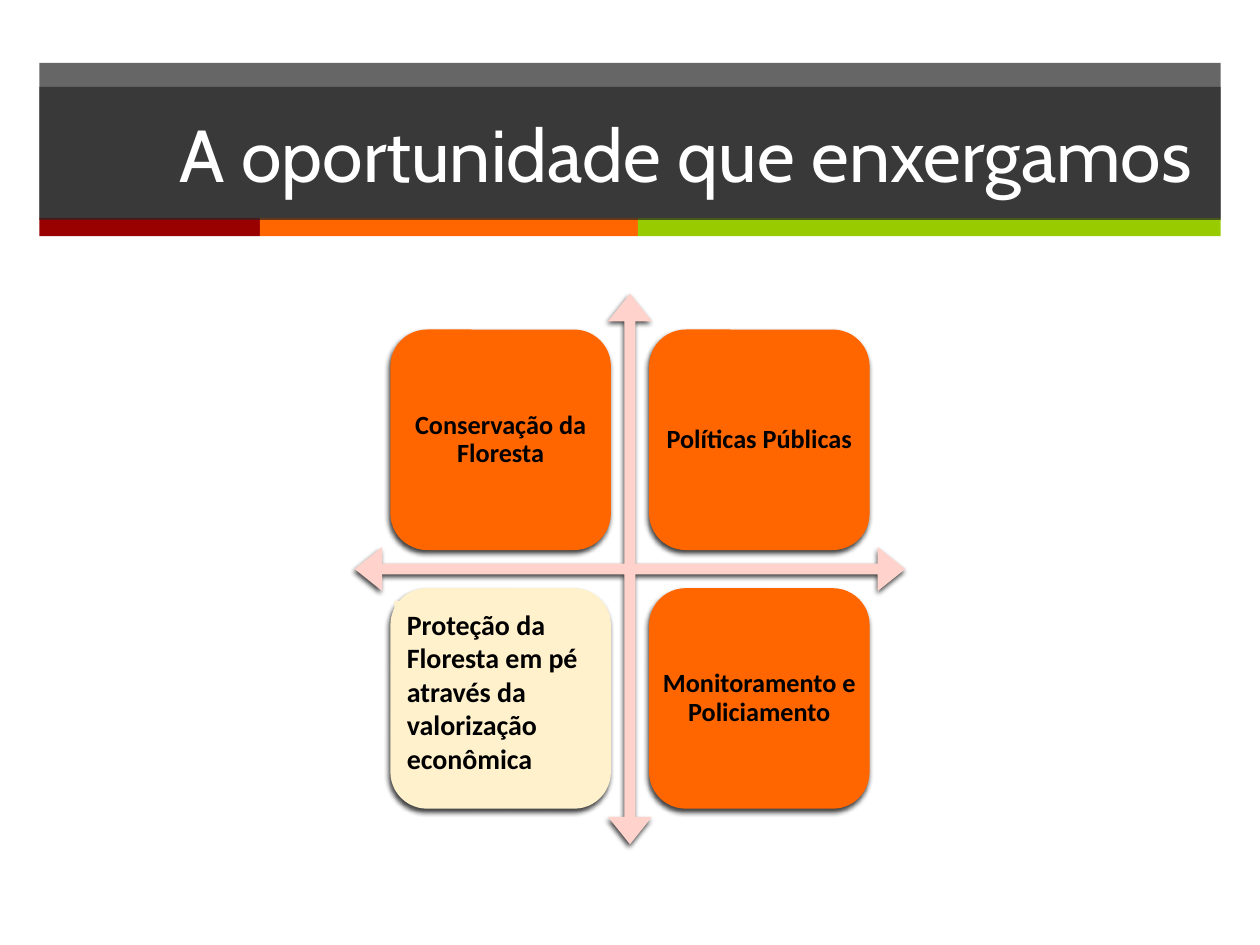
import pptx
import pptx.dml.color
import pptx.enum.shapes
import pptx.enum.text
import pptx.oxml
import pptx.oxml.ns
import pptx.util
from lxml import etree

Pt = pptx.util.Pt
RGBColor = pptx.dml.color.RGBColor
Shape = pptx.enum.shapes.MSO_SHAPE
Align = pptx.enum.text.PP_ALIGN
Anchor = pptx.enum.text.MSO_ANCHOR
AutoSize = pptx.enum.text.MSO_AUTO_SIZE
qn = pptx.oxml.ns.qn

CHARCOAL = RGBColor(0x26, 0x26, 0x26)
RED = RGBColor(0x99, 0x00, 0x00)
ORANGE = RGBColor(0xFF, 0x66, 0x00)
GREEN = RGBColor(0x99, 0xCC, 0x00)
PINK = RGBColor(0xFF, 0xD3, 0xCC)
CREAM = RGBColor(0xFF, 0xF1, 0xCC)
WHITE = RGBColor(0xFF, 0xFF, 0xFF)
BLACK = RGBColor(0x00, 0x00, 0x00)

BANNER_LEFT, BANNER_WIDTH = 22.5, 675
STRIPE_TOP, STRIPE_HEIGHT = 124.5, 10.5
STRIPES = [(126, RED), (216, ORANGE), (333, GREEN)]
CENTER_X, CENTER_Y = 360, 325.2
AXES_SIZE, QUADRANT_SIZE, QUADRANT_GAP = 314.6, 126, 21.8
QUADRANTS = [
    ("Conservação da Floresta", ORANGE),
    ("Políticas Públicas", ORANGE),
    ("", CREAM),
    ("Monitoramento e Policiamento", ORANGE),
]
PROTECTION = ["Proteção da Floresta em pé", "através da valorização econômica"]


def paint(shape, color, alpha=100):
    """Fill a shape with one colour, at the given opacity in percent."""
    shape.fill.solid()
    shape.fill.fore_color.rgb = color
    if alpha < 100:
        srgb = shape.element.spPr.find(f"{qn('a:solidFill')}/{qn('a:srgbClr')}")
        etree.SubElement(srgb, qn("a:alpha"), val=str(alpha * 1000))


def add_block(slide, kind, left, top, width, height, color, alpha=100):
    """Add a borderless preset shape without a shadow."""
    block = slide.shapes.add_shape(kind, Pt(left), Pt(top), Pt(width), Pt(height))
    block.shadow.inherit = False
    block.line.fill.background()
    paint(block, color, alpha)
    return block


def cast_shadow(shape):
    """Give a shape the soft shadow of the matrix."""
    effects = shape.element.spPr.find(qn("a:effectLst"))
    shadow = etree.SubElement(
        effects, qn("a:outerShdw"), blurRad=str(Pt(3)), dist=str(Pt(2)),
        dir=str(110 * 60000), algn="ctr", rotWithShape="0")
    black = etree.SubElement(shadow, qn("a:srgbClr"), val=str(BLACK))
    etree.SubElement(black, qn("a:alpha"), val="75000")


def write(paragraph, text, font, size, color, align, bold=False):
    """Write one formatted run into a paragraph."""
    paragraph.alignment = align
    run = paragraph.add_run()
    run.text = text
    run.font.name = font
    run.font.size = Pt(size)
    run.font.bold = bold
    run.font.color.rgb = color


def add_banner(slide):
    """Build the header band, the stripes and the title."""
    add_block(slide, Shape.RECTANGLE, BANNER_LEFT, 36, BANNER_WIDTH, 89, CHARCOAL, 70)
    left = BANNER_LEFT
    for width, color in STRIPES:
        add_block(slide, Shape.RECTANGLE, left, STRIPE_TOP, width, STRIPE_HEIGHT, color)
        left += width
    title = slide.shapes.title
    title.left, title.top = Pt(BANNER_LEFT), Pt(49.7)
    title.width, title.height = Pt(BANNER_WIDTH), Pt(76)
    paint(title, CHARCOAL, 70)
    frame = title.text_frame
    frame.auto_size = AutoSize.NONE
    frame.vertical_anchor = Anchor.MIDDLE
    write(frame.paragraphs[0], "A oportunidade que enxergamos ", "Cabin", 42,
          WHITE, Align.RIGHT)
    title.element.getparent().append(title.element)


def add_axes(slide):
    """Add the four-way arrow behind the quadrants."""
    axes = add_block(slide, Shape.QUAD_ARROW, CENTER_X - AXES_SIZE / 2,
                     CENTER_Y - AXES_SIZE / 2, AXES_SIZE, AXES_SIZE, PINK)
    for index, value in enumerate((0.02, 0.04, 0.05)):
        axes.adjustments[index] = value
    cast_shadow(axes)


def add_quadrant(slide, row, column, label, color):
    """Add one rounded quadrant with its centred label."""
    step = QUADRANT_SIZE + QUADRANT_GAP
    left = CENTER_X - step + QUADRANT_GAP / 2 + column * step
    top = CENTER_Y - step + QUADRANT_GAP / 2 + row * step
    quadrant = add_block(slide, Shape.ROUNDED_RECTANGLE, left, top,
                         QUADRANT_SIZE, QUADRANT_SIZE, color)
    cast_shadow(quadrant)
    if label:
        frame = quadrant.text_frame
        frame.word_wrap = True
        frame.vertical_anchor = Anchor.MIDDLE
        frame.margin_left = frame.margin_right = Pt(0)
        frame.margin_top = frame.margin_bottom = Pt(0)
        frame.paragraphs[0].line_spacing = 0.9
        write(frame.paragraphs[0], label, "Calibri", 15, BLACK, Align.CENTER, True)


def add_protection_text(slide):
    """Add the left-aligned text over the highlighted quadrant."""
    protection = slide.shapes.add_textbox(Pt(225.4), Pt(343.4), Pt(113.8), Pt(104.4))
    paint(protection, CREAM)
    frame = protection.text_frame
    frame.word_wrap = True
    frame.auto_size = AutoSize.SHAPE_TO_FIT_TEXT
    for index, text in enumerate(PROTECTION):
        paragraph = frame.add_paragraph() if index else frame.paragraphs[0]
        write(paragraph, text, "Calibri", 16, BLACK, Align.LEFT, True)


def main():
    """Build and save the slide."""
    deck = pptx.Presentation()
    deck.slide_width, deck.slide_height = Pt(720), Pt(540)
    slide = deck.slides.add_slide(deck.slide_layouts[5])
    add_banner(slide)
    add_axes(slide)
    for index, (label, color) in enumerate(QUADRANTS):
        add_quadrant(slide, *divmod(index, 2), label, color)
    add_protection_text(slide)
    deck.save("out.pptx")


if __name__ == "__main__":
    main()
